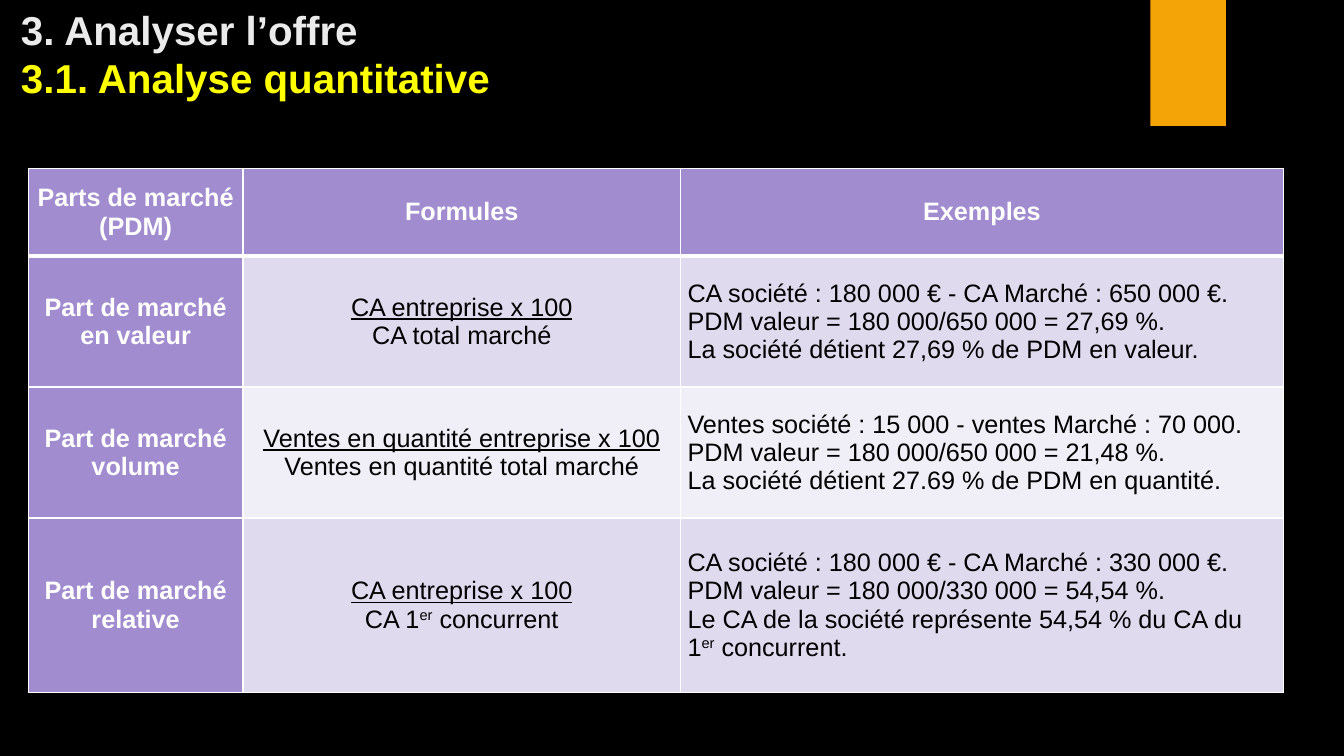
"""Builds the slide on quantitative analysis of market shares."""
import pptx
import pptx.dml.color
import pptx.enum.shapes
import pptx.enum.text
import pptx.oxml
import pptx.oxml.ns
import pptx.util

Inches, Pt = pptx.util.Inches, pptx.util.Pt
RGBColor = pptx.dml.color.RGBColor
ALIGN, ANCHOR = pptx.enum.text.PP_ALIGN, pptx.enum.text.MSO_ANCHOR

BLACK = RGBColor(0x00, 0x00, 0x00)
WHITE = RGBColor(0xFF, 0xFF, 0xFF)
LIGHT_GREY = RGBColor(0xEB, 0xEB, 0xEB)
YELLOW = RGBColor(0xFF, 0xFF, 0x00)
ORANGE = RGBColor(0xF5, 0xA4, 0x08)
PURPLE = RGBColor(0xA1, 0x8C, 0xD0)
LILAC = RGBColor(0xE0, 0xDA, 0xEE)
PALE_LILAC = RGBColor(0xF0, 0xEE, 0xF7)

HEADING = {"size": Pt(28.8), "name": "Arial", "bold": True}
LABEL = {"size": Pt(18), "name": "Arial", "bold": True}
BODY = {"size": Pt(18), "name": "Arial", "bold": False}

COL_WIDTHS = [2.13, 4.34, 5.98]
ROW_HEIGHTS = [0.87, 1.3, 1.3, 1.73]
ROWS = [
    (["Parts de marché (PDM)"], ["Formules"], ["Exemples"]),
    (["Part de marché en valeur"],
     ["CA entreprise x 100", "CA total marché"],
     ["CA société : 180 000 € - CA Marché : 650 000 €.",
      "PDM valeur = 180 000/650 000 = 27,69 %.",
      "La société détient 27,69 % de PDM en valeur."]),
    (["Part de marché volume"],
     ["Ventes en quantité entreprise x 100", "Ventes en quantité total marché"],
     ["Ventes société : 15 000 - ventes Marché : 70 000.",
      "PDM valeur = 180 000/650 000 = 21,48 %.",
      "La société détient 27.69 % de PDM en quantité."]),
    (["Part de marché relative"],
     ["CA entreprise x 100", "CA 1^er^ concurrent"],
     ["CA société : 180 000 € - CA Marché : 330 000 €.",
      "PDM valeur = 180 000/330 000 = 54,54 %.",
      "Le CA de la société représente 54,54 % du CA du 1^er^ concurrent."]),
]


def add_run(p, text, style, color):
    """Add a run with the given font values and colour."""
    r = p.add_run()
    r.text = text
    for name, value in style.items():
        setattr(r.font, name, value)
    r.font.color.rgb = color
    return r


def add_title(slide):
    """Add the two-line heading."""
    tb = slide.shapes.add_textbox(Inches(0.11), Inches(0), Inches(11.81), Inches(1.06))
    tf = tb.text_frame
    tf.word_wrap = True
    tf.vertical_anchor = ANCHOR.BOTTOM
    p = tf.paragraphs[0]
    add_run(p, "3. Analyser l’offre", HEADING, LIGHT_GREY)
    p.add_line_break()
    add_run(p, "3.1. Analyse quantitative", HEADING, YELLOW)


def add_ribbon(slide):
    """Add the orange block at the top edge."""
    s = slide.shapes.add_shape(pptx.enum.shapes.MSO_SHAPE.RECTANGLE,
                               Inches(11.41), Inches(0), Inches(0.75), Inches(1.25))
    s.shadow.inherit = False
    s.fill.solid()
    s.fill.fore_color.rgb = ORANGE
    s.line.fill.background()


def set_borders(cell, top, bottom):
    """Draw white borders, with top and bottom widths in points."""
    tcPr = cell._tc.get_or_add_tcPr()
    for side, width in {"L": 1, "R": 1, "T": top, "B": bottom}.items():
        tcPr.append(pptx.oxml.parse_xml(
            f'<a:ln{side} {pptx.oxml.ns.nsdecls("a")} w="{Pt(width)}">'
            f'<a:solidFill><a:srgbClr val="{WHITE}"/></a:solidFill></a:ln{side}>'))


def fill_cell(cell, lines, row, col):
    """Style a cell by its place and write its lines, with ^ around superscripts."""
    is_label = row == 0 or col == 0
    set_borders(cell, 3 if row == 1 else 1, 3 if row == 0 else 1)
    cell.fill.solid()
    cell.fill.fore_color.rgb = PURPLE if is_label else LILAC if row % 2 else PALE_LILAC
    cell.vertical_anchor = ANCHOR.MIDDLE
    cell.margin_left = cell.margin_right = Inches(0.07)
    cell.margin_top = cell.margin_bottom = Inches(0)
    tf = cell.text_frame
    for i, line in enumerate(lines):
        p = tf.add_paragraph() if i else tf.paragraphs[0]
        p.alignment = ALIGN.CENTER if is_label or col == 1 else ALIGN.LEFT
        for j, part in enumerate(line.split("^")):
            r = add_run(p, part, LABEL if is_label else BODY, WHITE if is_label else BLACK)
            if not is_label and col == 1 and i == 0:
                r.font.underline = True
            if j % 2:
                r._r.get_or_add_rPr().set("baseline", "30000")


def add_share_table(slide):
    """Add the table of market shares, formulas and examples."""
    table = slide.shapes.add_table(
        len(ROWS), len(COL_WIDTHS), Inches(0.28), Inches(1.67),
        Inches(sum(COL_WIDTHS)), Inches(sum(ROW_HEIGHTS))).table
    table.first_col = True
    for column, width in zip(table.columns, COL_WIDTHS):
        column.width = Inches(width)
    for i, (cells, height) in enumerate(zip(ROWS, ROW_HEIGHTS)):
        table.rows[i].height = Inches(height)
        for j, lines in enumerate(cells):
            fill_cell(table.cell(i, j), lines, i, j)


def main():
    """Build and save the slide."""
    prs = pptx.Presentation()
    prs.slide_width, prs.slide_height = Inches(13.33), Inches(7.5)
    slide = prs.slides.add_slide(prs.slide_layouts[6])
    slide.background.fill.solid()
    slide.background.fill.fore_color.rgb = BLACK
    add_ribbon(slide)
    add_title(slide)
    add_share_table(slide)
    prs.save("out.pptx")


if __name__ == "__main__":
    main()
